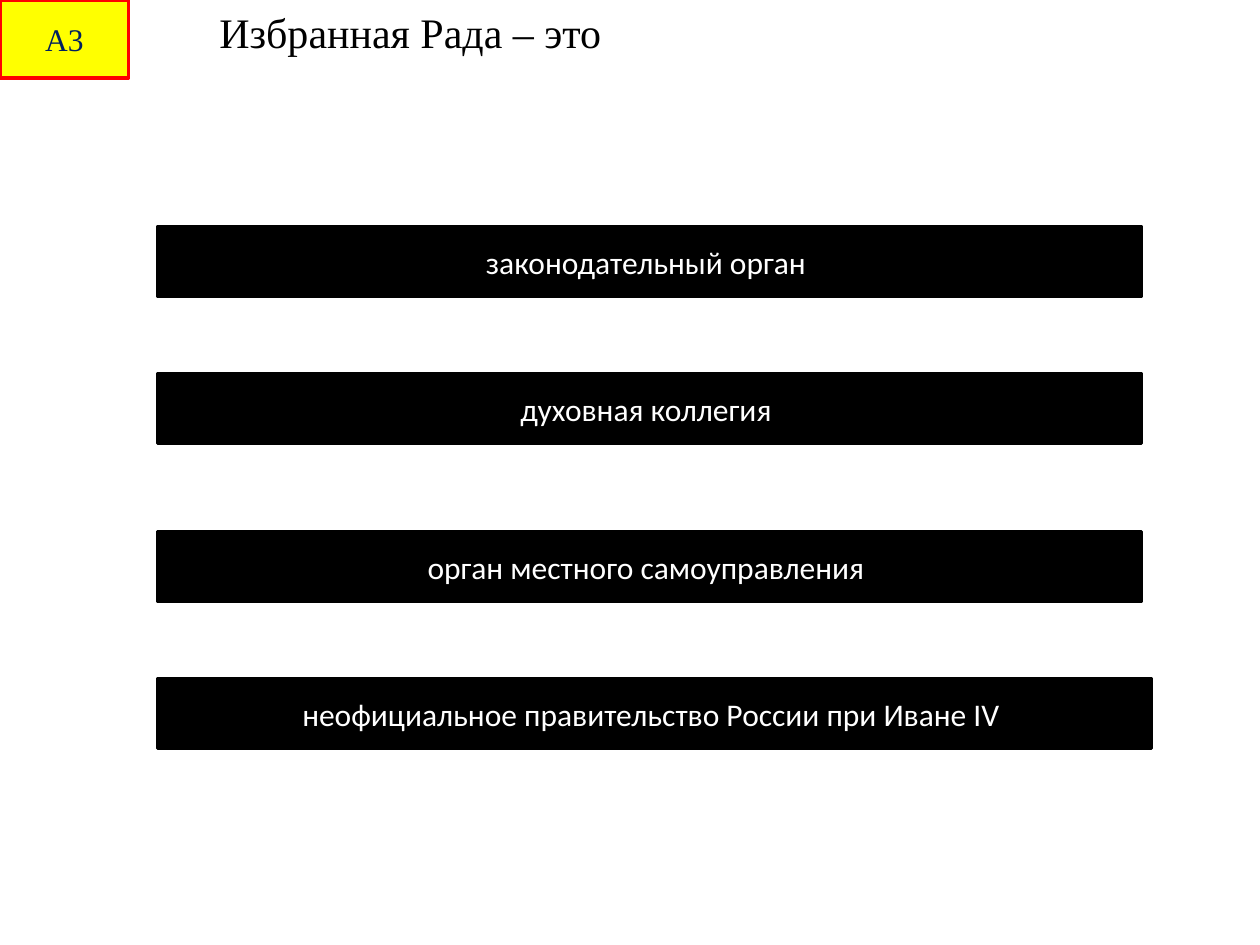
"""Build a quiz slide with a question and four answer buttons."""
from pptx import Presentation
from pptx.dml.color import RGBColor
from pptx.enum.shapes import MSO_SHAPE as Shape
from pptx.enum.text import MSO_ANCHOR as Anchor, MSO_AUTO_SIZE as AutoSize, PP_ALIGN as Align
from pptx.util import Inches, Pt

COLORS = {
    "black": "000000",
    "white": "FFFFFF",
    "yellow": "FFFF00",
    "red": "FF0000",
    "navy": "002060",
}


def write_text(shape, text, font="Calibri", size=18, color="white",
               align=Align.CENTER, anchor=Anchor.MIDDLE):
    frame = shape.text_frame
    frame.word_wrap = True
    frame.vertical_anchor = anchor
    paragraph = frame.paragraphs[0]
    paragraph.alignment = align
    run = paragraph.add_run()
    run.text = text
    run.font.name = font
    run.font.size = Pt(size)
    run.font.color.rgb = RGBColor.from_string(COLORS[color])


def add_box(slide, kind, left, top, width, height, fill, line):
    shape = slide.shapes.add_shape(
        kind, Inches(left), Inches(top), Inches(width), Inches(height))
    shape.shadow.inherit = False
    shape.fill.solid()
    shape.fill.fore_color.rgb = RGBColor.from_string(COLORS[fill])
    shape.line.color.rgb = RGBColor.from_string(COLORS[line])
    shape.line.width = Pt(2)
    return shape


presentation = Presentation()
presentation.slide_width = Inches(10)
presentation.slide_height = Inches(7.5)
slide = presentation.slides.add_slide(presentation.slide_layouts[5])

title = slide.shapes.title
title.left, title.top = Inches(1.64), Inches(0)
title.width, title.height = Inches(4.61), Inches(0.5)
write_text(title, "Избранная Рада – это", font="Times New Roman", size=24,
           color="black", align=Align.LEFT, anchor=Anchor.TOP)
title.text_frame.auto_size = AutoSize.SHAPE_TO_FIT_TEXT

badge = add_box(slide, Shape.RECTANGLE, 0, 0, 1.02, 0.62, "yellow", "red")
write_text(badge, "А3", font="Times New Roman", color="navy")

BACK, NEXT = Shape.ACTION_BUTTON_BEGINNING, Shape.ACTION_BUTTON_FORWARD_OR_NEXT
answers = [
    ("законодательный орган ", BACK, 1.8, 7.81),
    ("духовная коллегия ", BACK, 2.97, 7.81),
    ("орган местного самоуправления ", BACK, 4.22, 7.81),
    ("неофициальное правительство России при Иване IV ", NEXT, 5.39, 7.89),
]
for answer, kind, top, width in answers:
    button = add_box(slide, kind, 1.25, top, width, 0.55, "black", "black")
    write_text(button, answer)

presentation.save("out.pptx")
